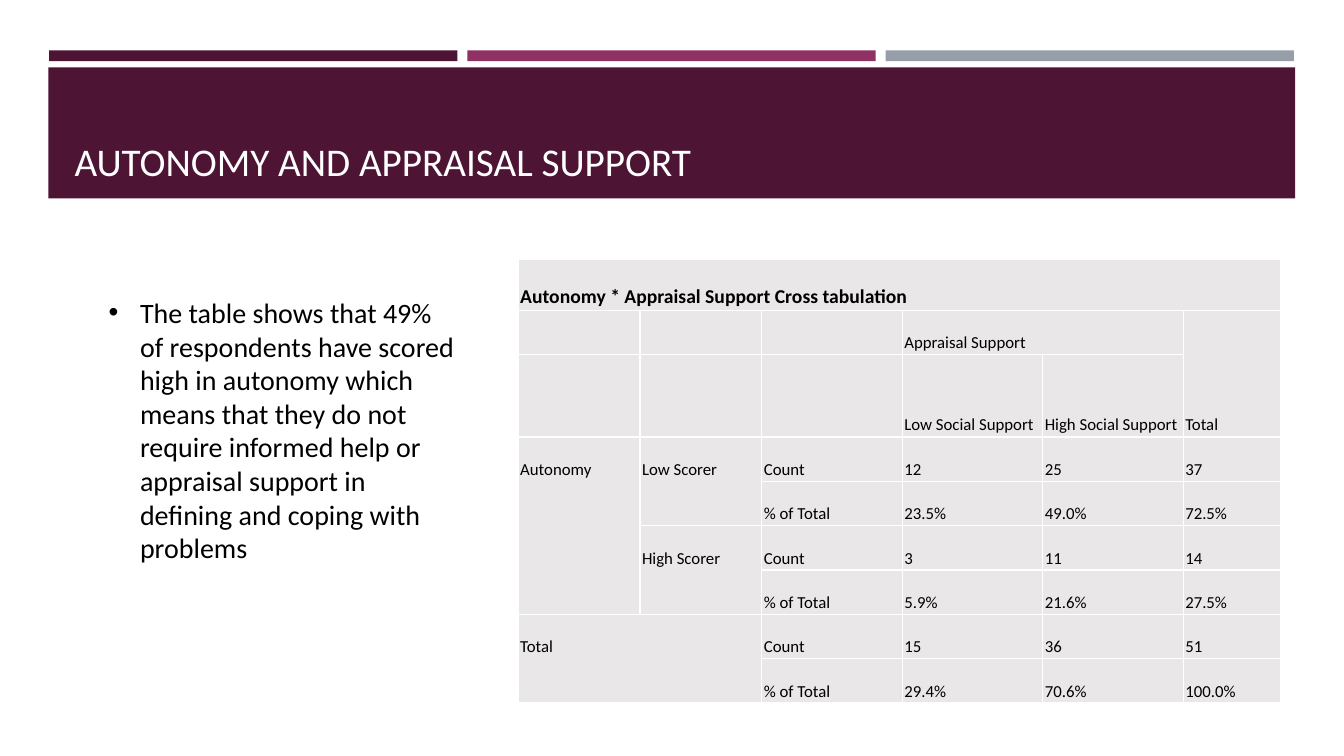
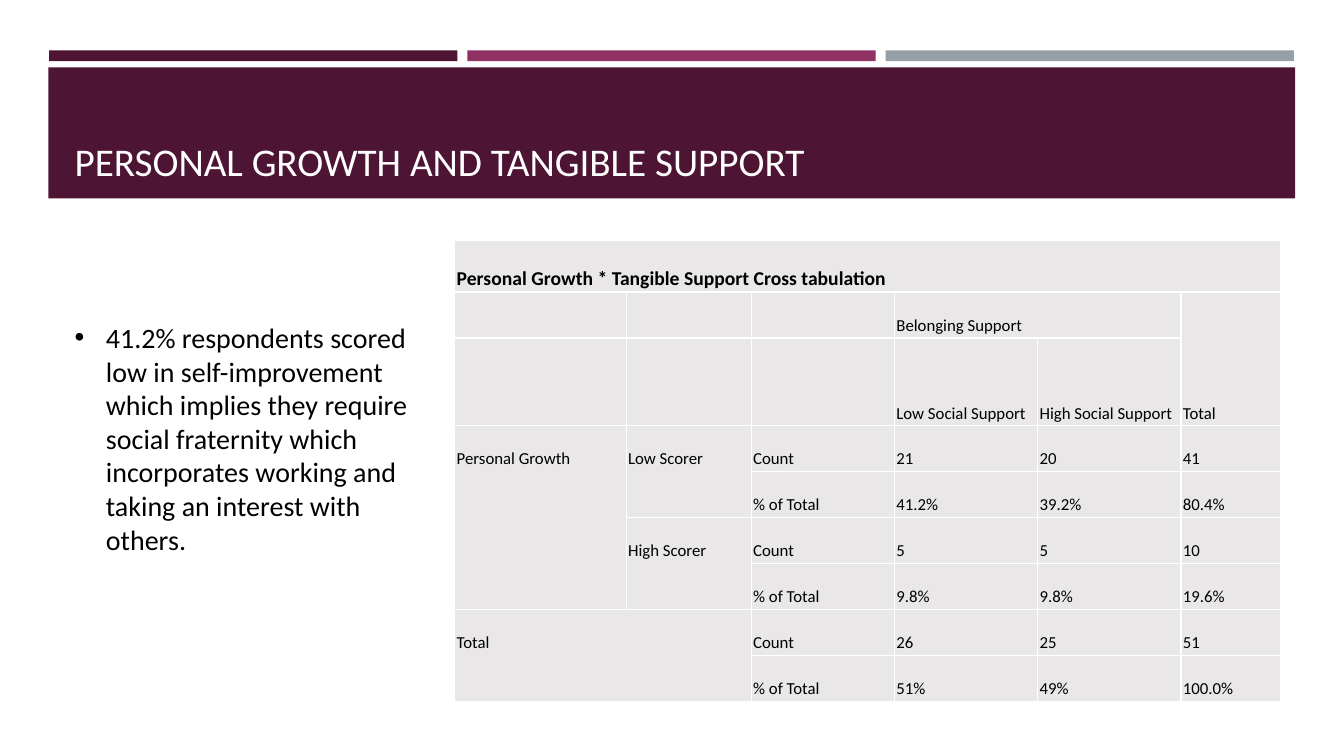
from dataclasses import dataclass
from typing import Any

from lxml.etree import SubElement as Sub, Element as Elem
from pptx import Presentation as Deck
from pptx.dml.color import RGBColor as Color
from pptx.enum.shapes import MSO_SHAPE as Kind
from pptx.enum.text import MSO_ANCHOR as Anchor, PP_ALIGN as Align
from pptx.oxml.ns import qn
from pptx.util import Cm, Pt

HUES = {
    "plum": "4D1434",
    "rose": "903163",
    "gray": "969FA7",
    "cell": "E9E7E8",
    "white": "FFFFFF",
    "black": "000000",
}
FONTS = {
    "title": {"name": "Calibri", "size": Pt(28), "bold": False},
    "body": {"name": "Calibri", "size": Pt(20), "bold": False},
    "head": {"name": "Calibri", "size": Pt(14), "bold": True},
    "cell": {"name": "Calibri", "size": Pt(12), "bold": False},
}
PLAIN = {"first_row": False, "horz_banding": False}
INSET = {f"margin_{side}": Cm(0.05) for side in ("left", "right", "top", "bottom")}
BARS = ("plum", "rose", "gray")
BAR_LEFT, BAR_STEP, BAR_WIDE = 1.24, 10.54, 10.29
EDGE = 12700


@dataclass
class Box:
    left: float
    top: float
    wide: float
    high: float

    def cm(self) -> list[Cm]:
        return [Cm(n) for n in (self.left, self.top, self.wide, self.high)]


@dataclass
class Label:
    row: int
    col: int
    text: str
    anchor: Any = Anchor.TOP
    down: int = 1
    over: int = 1
    font: str = "cell"


@dataclass
class Page:
    title: str
    note: str
    note_box: Box
    trait: str
    topic: str
    group: str
    left: float
    top: float
    cols: list[float]
    row: float
    tall: float
    data: list[list[str]]


PAGES = [
    Page(
        "AUTONOMY AND APPRAISAL SUPPORT",
        "The table shows that 49% of respondents have scored high in autonomy "
        "which means that they do not require informed help or appraisal support "
        "in defining and coping with problems",
        Box(2.49, 7.32, 9.37, 6.25),
        "Autonomy", "Appraisal Support", "Appraisal Support",
        13.06, 6.53, [3.07, 3.07, 3.54, 3.54, 3.54, 2.44], 1.1, 2.08,
        [
            ["12", "25", "37"],
            ["23.5%", "49.0%", "72.5%"],
            ["3", "11", "14"],
            ["5.9%", "21.6%", "27.5%"],
            ["15", "36", "51"],
            ["29.4%", "70.6%", "100.0%"],
        ],
    ),
    Page(
        "PERSONAL GROWTH AND TANGIBLE SUPPORT",
        "41.2% respondents scored low in self-improvement which implies they "
        "require social fraternity which incorporates working and taking an "
        "interest with others.",
        Box(1.63, 7.95, 9.12, 7.01),
        "Personal Growth", "Tangible Support", "Belonging Support",
        11.46, 6.07, [4.32, 3.15, 3.61, 3.61, 3.61, 2.5], 1.16, 2.21,
        [
            ["21", "20", "41"],
            ["41.2%", "39.2%", "80.4%"],
            ["5", "5", "10"],
            ["9.8%", "9.8%", "19.6%"],
            ["26", "25", "51"],
            ["51%", "49%", "100.0%"],
        ],
    ),
]


def apply(item: Any, form: dict[str, Any]) -> None:
    for key, value in form.items():
        setattr(item, key, value)


def paint(fill: Any, hue: str) -> None:
    fill.solid()
    fill.fore_color.rgb = Color.from_string(HUES[hue])


def write(frame: Any, text: str, font: str, hue: str) -> Any:
    para = frame.paragraphs[0]
    run = para.add_run()
    run.text = text
    apply(run.font, FONTS[font])
    run.font.color.rgb = Color.from_string(HUES[hue])
    return para


def add_bar(slide: Any, box: Box, hue: str) -> None:
    bar = slide.shapes.add_shape(Kind.RECTANGLE, *box.cm())
    bar.shadow.inherit = False
    bar.line.fill.background()
    paint(bar.fill, hue)


def add_text(slide: Any, box: Box, text: str, font: str, hue: str, anchor: Any) -> Any:
    frame = slide.shapes.add_textbox(*box.cm()).text_frame
    apply(frame, {"word_wrap": True, "vertical_anchor": anchor})
    return write(frame, text, font, hue)


def add_top(slide: Any, title: str) -> None:
    for i, hue in enumerate(BARS):
        add_bar(slide, Box(BAR_LEFT + i * BAR_STEP, 1.27, BAR_WIDE, 0.27), hue)
    add_bar(slide, Box(1.22, 1.7, 31.42, 3.3), "plum")
    add_text(slide, Box(1.63, 1.96, 30.63, 2.82), title, "title", "white", Anchor.BOTTOM)


def add_note(slide: Any, page: Page) -> None:
    para = add_text(slide, page.note_box, page.note, "body", "black", Anchor.TOP)
    props = para._p.get_or_add_pPr()
    props.set("marL", str(Cm(0.79)))
    props.set("indent", str(-Cm(0.79)))
    Sub(props, qn("a:buFont"), typeface="Arial")
    Sub(props, qn("a:buChar"), char="•")


def add_edges(cell: Any) -> None:
    props = cell._tc.get_or_add_tcPr()
    for i, side in enumerate("LRTB"):
        line = Elem(qn(f"a:ln{side}"), w=str(EDGE))
        Sub(Sub(line, qn("a:solidFill")), qn("a:srgbClr"), val=HUES["white"])
        props.insert(i, line)


def list_labels(page: Page) -> list[Label]:
    low = Anchor.BOTTOM
    mid = Anchor.MIDDLE
    name = f"{page.trait} * {page.topic} Cross tabulation"
    labels = [
        Label(0, 0, name, mid, over=6, font="head"),
        Label(1, 3, page.group, low, over=2),
        Label(1, 5, "Total", low, down=2),
        Label(2, 3, "Low Social Support", low),
        Label(2, 4, "High Social Support", low),
        Label(3, 0, page.trait, down=4),
        Label(3, 1, "Low Scorer", down=2),
        Label(5, 1, "High Scorer", down=2),
        Label(7, 0, "Total", down=2, over=2),
    ]
    for i, line in enumerate(page.data):
        labels.append(Label(3 + i, 2, ("Count", "% of Total")[i % 2]))
        labels += [Label(3 + i, 3 + j, text, mid) for j, text in enumerate(line)]
    return labels


def add_grid(slide: Any, page: Page) -> None:
    rows = [page.row] * 9
    rows[2] = page.tall
    box = Box(page.left, page.top, sum(page.cols), sum(rows))
    grid = slide.shapes.add_table(len(rows), len(page.cols), *box.cm()).table
    apply(grid, PLAIN)
    for col, wide in zip(grid.columns, page.cols):
        col.width = Cm(wide)
    for row, high in zip(grid.rows, rows):
        row.height = Cm(high)
    for cell in grid.iter_cells():
        paint(cell.fill, "cell")
        add_edges(cell)
    for label in list_labels(page):
        cell = grid.cell(label.row, label.col)
        if label.down * label.over > 1:
            end = grid.cell(label.row + label.down - 1, label.col + label.over - 1)
            cell.merge(end)
        apply(cell, {**INSET, "vertical_anchor": label.anchor})
        para = write(cell.text_frame, label.text, label.font, "black")
        apply(para, {"alignment": Align.JUSTIFY, "line_spacing": 2.0})


def main() -> None:
    deck = Deck()
    apply(deck, {"slide_width": Cm(33.87), "slide_height": Cm(19.05)})
    for page in PAGES:
        slide = deck.slides.add_slide(deck.slide_layouts[6])
        add_top(slide, page.title)
        add_grid(slide, page)
        add_note(slide, page)
    deck.save("out.pptx")


if __name__ == "__main__":
    main()
